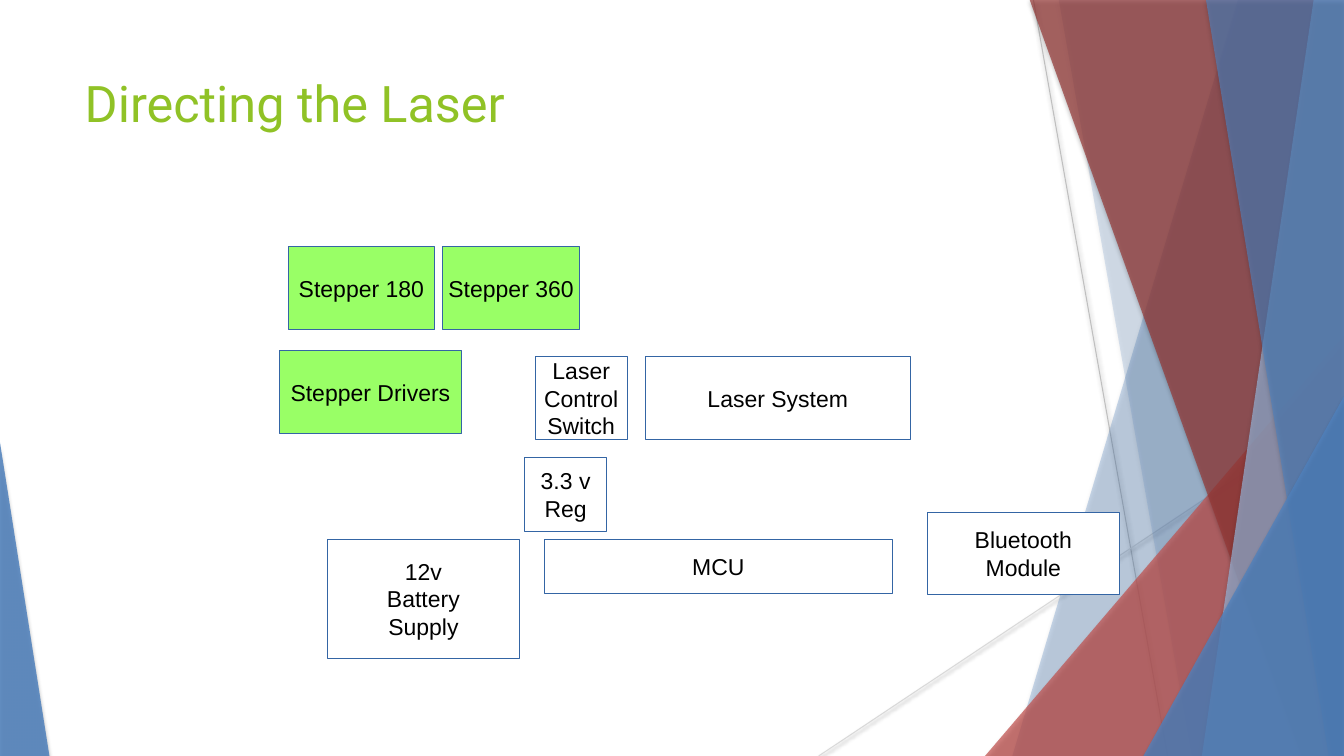
from lxml.etree import SubElement
from pptx import Presentation
from pptx.dml.color import RGBColor
from pptx.enum.shapes import MSO_CONNECTOR as Link, MSO_SHAPE as Kind
from pptx.enum.text import MSO_ANCHOR as Anchor, MSO_AUTO_SIZE as Fit, PP_ALIGN as Align
from pptx.oxml.ns import qn
from pptx.util import Inches, Pt

WIDE, HIGH = 13.33, 7.5
BLUE, RED, WHITE, GREEN = "4F81BD", "C0504D", "FFFFFF", "99FF66"


def color(code):
    return RGBColor.from_string(code)


def shade(part, alpha, blur, dist):
    """Give a part a black shadow that falls straight down."""
    props = part._element.spPr
    for old in props.findall(qn("a:effectLst")):
        props.remove(old)
    glow = SubElement(SubElement(props, qn("a:effectLst")), qn("a:outerShdw"),
                      blurRad=str(Pt(blur)), dist=str(Pt(dist)),
                      dir="5400000", rotWithShape="0")
    tone = SubElement(glow, qn("a:srgbClr"), val="000000")
    SubElement(tone, qn("a:alpha"), val=str(alpha * 1000))


def glaze(part, code, alpha):
    """Fill a part with a see-through colour, without an outline."""
    part.fill.solid()
    part.fill.fore_color.rgb = color(code)
    tone = part._element.spPr.find(qn("a:solidFill"))[0]
    SubElement(tone, qn("a:alpha"), val=str(alpha * 1000))
    part.line.fill.background()
    shade(part, 35, 3, 2)


def ray(slide, start, end, code):
    line = slide.shapes.add_connector(
        Link.STRAIGHT, *[Inches(v) for v in (*start, *end)])
    line.line.color.rgb = color(code)
    line.line.width = Pt(0.75)
    shade(line, 38, 3.1, 1.6)


def band(slide, top, foot, code, alpha):
    """Fill from a slanted left edge to the right side of the slide."""
    edge = [(top, -0.01), (WIDE, -0.01), (WIDE, HIGH), (foot, HIGH)]
    pts = [(Inches(x), Inches(y)) for x, y in edge]
    path = slide.shapes.build_freeform(*pts[0])
    path.add_line_segments(pts[1:], close=True)
    glaze(path.convert_to_shape(), code, alpha)


def wedge(slide, left, top, width, tip, code, alpha):
    """Draw a triangle that stands on the bottom of the slide."""
    part = slide.shapes.add_shape(
        Kind.ISOSCELES_TRIANGLE,
        *[Inches(v) for v in (left, top, width, HIGH - top)])
    part.adjustments[0] = tip
    glaze(part, code, alpha)


def decor(slide):
    ray(slide, (10.25, 0), (11.58, HIGH), "BFBFBF")
    ray(slide, (WIDE, 4.03), (8.12, HIGH), "D9D9D9")
    band(slide, 12.28, 10.04, BLUE, 30)
    band(slide, 10.5, 11.82, BLUE, 20)
    wedge(slide, 9.77, 3.33, WIDE - 9.77, 1, RED, 72)
    band(slide, 10.21, 12.91, "953735", 70)
    band(slide, 13.03, 11.92, "95B3D7", 70)
    band(slide, 11.96, 13.18, BLUE, 65)
    wedge(slide, 11.34, 3.93, WIDE - 11.34, 1, BLUE, 80)
    wedge(slide, 0, 4.39, 0.49, 0, BLUE, 85)


def write(para, text, font, size, code):
    run = para.add_run()
    run.text = text
    run.font.name, run.font.size = font, Pt(size)
    run.font.color.rgb = color(code)


def head(slide, text, box):
    title = slide.shapes.title
    title.left, title.top, title.width, title.height = map(Inches, box)
    frame = title.text_frame
    frame.auto_size, frame.word_wrap = Fit.NONE, True
    frame.vertical_anchor = Anchor.TOP
    para = frame.paragraphs[0]
    para.alignment = Align.LEFT
    write(para, text, "Roboto", 36, "90C226")


def block(slide, lines, box, fill):
    part = slide.shapes.add_shape(Kind.RECTANGLE, *map(Inches, box))
    part.shadow.inherit = False
    part.fill.solid()
    part.fill.fore_color.rgb = color(fill)
    part.line.color.rgb = color("3465A4")
    part.line.width = Pt(0.75)
    frame = part.text_frame
    frame.word_wrap, frame.vertical_anchor = False, Anchor.MIDDLE
    frame.margin_left = frame.margin_right = Inches(0.09)
    frame.margin_top = frame.margin_bottom = Inches(0.04)
    for i, text in enumerate(lines):
        para = frame.add_paragraph() if i else frame.paragraphs[0]
        para.alignment = Align.CENTER
        write(para, text, "Arial", 16.4, "000000")


def chart(slide):
    """Place the blocks of the laser system diagram."""
    tall = 0.82
    laser, base, step = 3.54, 5.35, 2.45
    for lines, box, fill in [
        (["Laser System"], (6.4, laser, 2.63, tall), WHITE),
        (["MCU"], (5.4, base, 3.45, 0.54), WHITE),
        (["3.3 v", "Reg"], (5.2, 4.54, 0.82, 0.73), WHITE),
        (["Bluetooth", "Module"], (9.2, 5.08, 1.9, tall), WHITE),
        (["Laser", "Control", "Switch"], (5.31, laser, 0.91, tall), WHITE),
        (["12v", "Battery", "Supply"], (3.25, base, 1.9, 1.18), WHITE),
        (["Stepper Drivers"], (2.77, 3.48, 1.81, tall), GREEN),
        (["Stepper 360"], (4.39, step, 1.36, tall), GREEN),
        (["Stepper 180"], (2.86, step, 1.45, tall), GREEN),
    ]:
        block(slide, lines, box, fill)


def main():
    deck = Presentation()
    deck.slide_width, deck.slide_height = Inches(WIDE), Inches(HIGH)
    slide = deck.slides.add_slide(deck.slide_layouts[5])
    decor(slide)
    head(slide, "Directing the Laser", (0.74, 0.67, 9.4, 1.44))
    chart(slide)
    deck.save("out.pptx")


if __name__ == "__main__":
    main()
